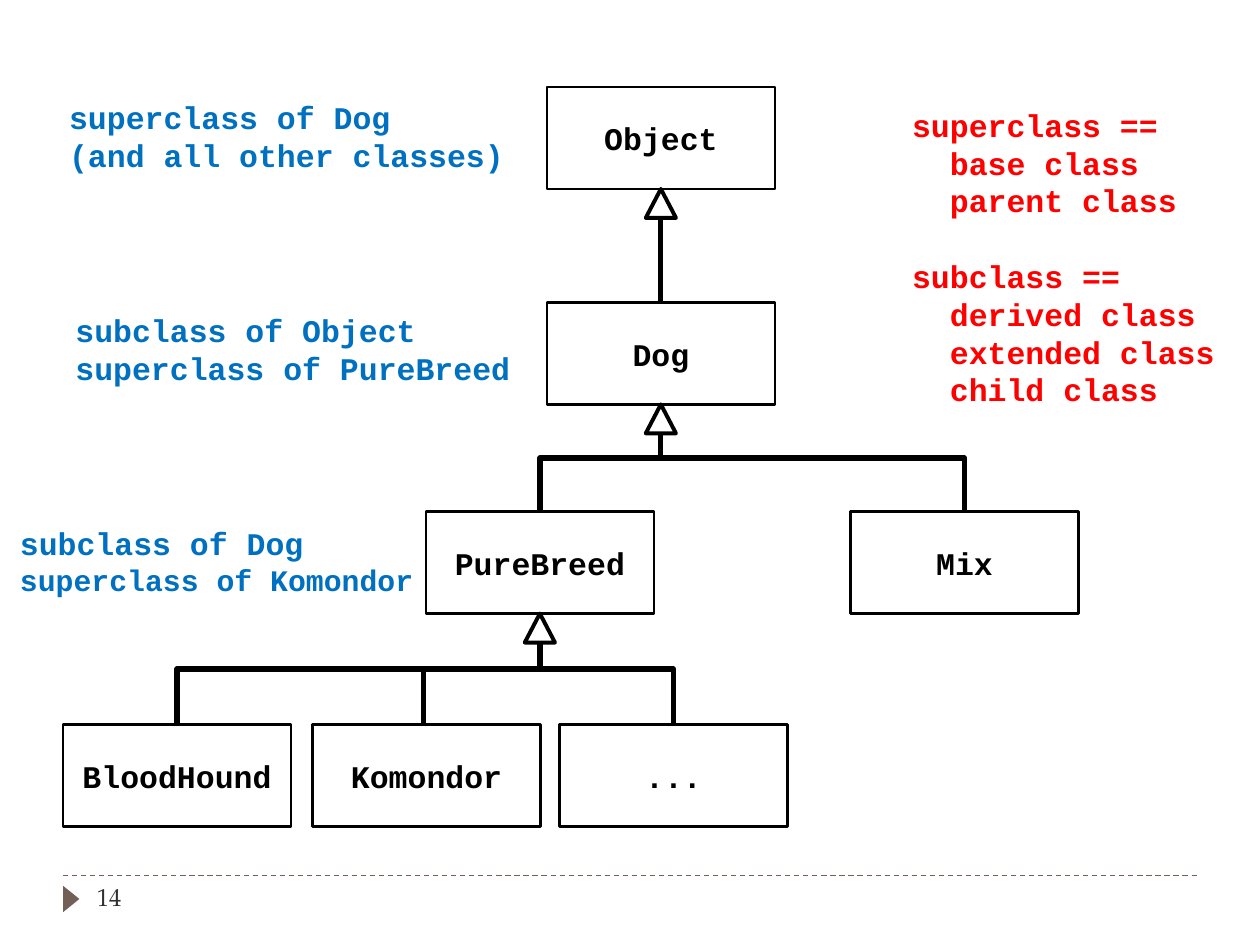
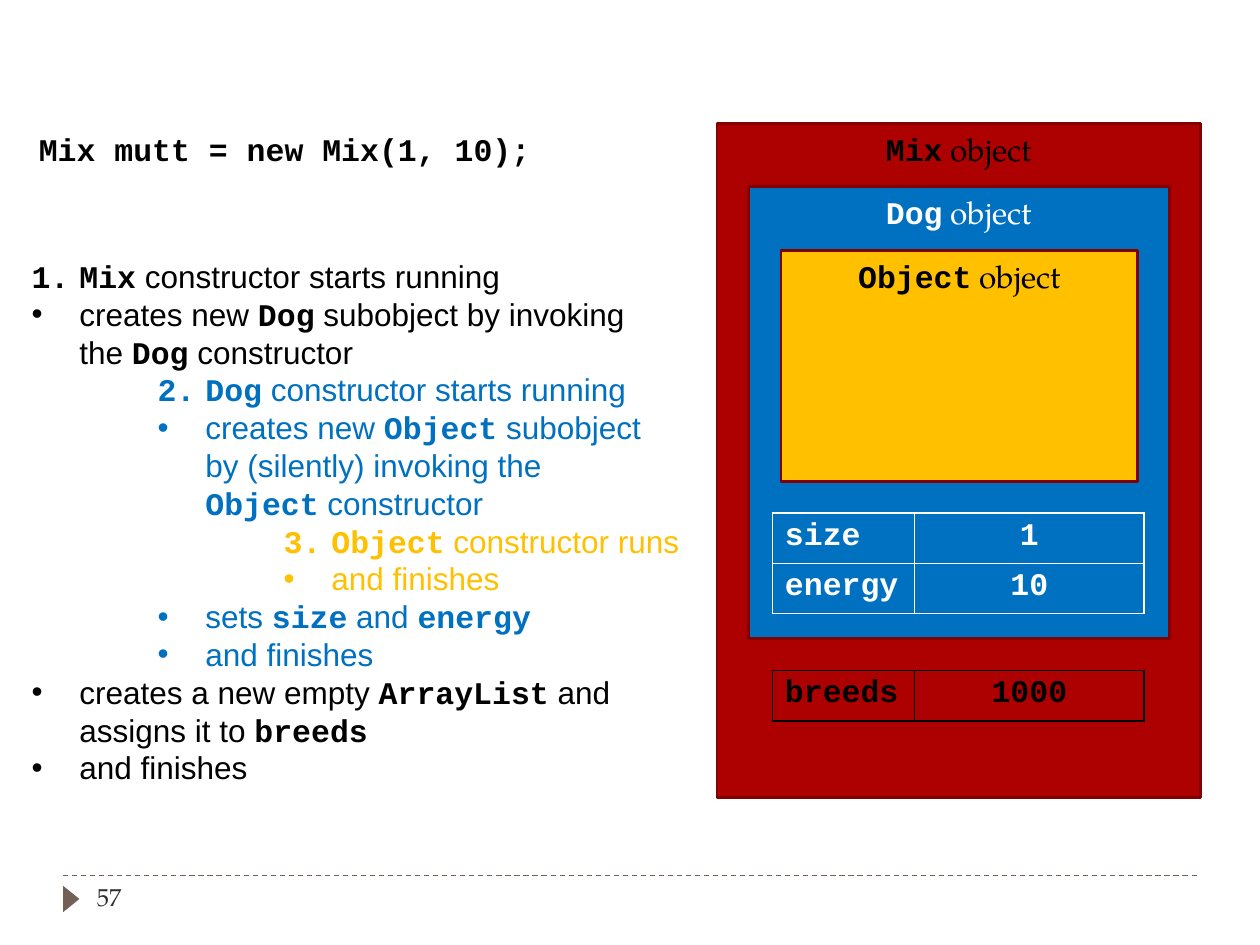
import copy
from dataclasses import dataclass

import pptx
import pptx.dml.color
import pptx.enum.dml
import pptx.enum.shapes
import pptx.enum.text
import pptx.oxml
import pptx.oxml.ns
import pptx.util
from lxml import etree

Inches = pptx.util.Inches
Pt = pptx.util.Pt
RGBColor = pptx.dml.color.RGBColor
Preset = pptx.enum.shapes.MSO_SHAPE
Connector = pptx.enum.shapes.MSO_CONNECTOR
Anchor = pptx.enum.text.MSO_ANCHOR
Align = pptx.enum.text.PP_ALIGN
qualified = pptx.oxml.ns.qn

BLACK = RGBColor(0x00, 0x00, 0x00)
WHITE = RGBColor(0xFF, 0xFF, 0xFF)
BLUE = RGBColor(0x00, 0x70, 0xC0)
RED = RGBColor(0xFF, 0x00, 0x00)
BRICK = RGBColor(0xAD, 0x01, 0x01)
DARK_RED = RGBColor(0x80, 0x01, 0x01)
AMBER = RGBColor(0xFF, 0xC0, 0x00)
TAUPE = RGBColor(0x72, 0x60, 0x56)
CHARCOAL = RGBColor(0x30, 0x30, 0x30)

CODE_FONT = "Courier New"
LIST_FONT = "Arial"
SERIF_FONT = "TeX Gyre Pagella"
TEXT_SIZE = 18
LEADING = 1.2

BOX_WIDTH, BOX_HEIGHT = 1.81, 0.81
ARROW_WIDTH, ARROW_HEIGHT = 0.24, 0.23
HANGING = 0.38


@dataclass(frozen=True)
class ClassBox:
    name: str
    left: float
    top: float

    @property
    def center(self) -> float:
        return self.left + BOX_WIDTH / 2

    @property
    def bottom(self) -> float:
        return self.top + BOX_HEIGHT


@dataclass(frozen=True)
class Note:
    """A text box of code; lines that start with a tab are indented."""
    left: float
    top: float
    width: float
    height: float
    lines: tuple[str, ...]
    color: RGBColor
    last_size: int = TEXT_SIZE


@dataclass(frozen=True)
class ObjectBox:
    label: str
    left: float
    top: float
    width: float
    height: float
    fill: RGBColor
    text_color: RGBColor


@dataclass(frozen=True)
class FieldTable:
    top: float
    rows: tuple[tuple[str, str], ...]
    color: RGBColor


@dataclass(frozen=True)
class Step:
    """A list line; code stands between backticks, number 0 means a bullet."""
    text: str
    depth: int = 0
    number: int = 0


OBJECT = ClassBox("Object", 4.34, 0.69)
DOG = ClassBox("Dog", 4.34, 2.4)
PURE_BREED = ClassBox("PureBreed", 3.38, 4.06)
MIX = ClassBox("Mix", 6.75, 4.06)
BLOOD_HOUND = ClassBox("BloodHound", 0.5, 5.75)
KOMONDOR = ClassBox("Komondor", 2.48, 5.75)
OTHERS = ClassBox("...", 4.44, 5.75)
HIERARCHY = {
    OBJECT: (DOG,),
    DOG: (MIX, PURE_BREED),
    PURE_BREED: (BLOOD_HOUND, OTHERS),
}

NOTES = (
    Note(0.5, 2.42, 3.67, 0.71, ("subclass of Object", "superclass of PureBreed"), BLUE),
    Note(0.06, 4.11, 3.36, 0.69, ("subclass of Dog", "superclass of Komondor"), BLUE, 17),
    Note(0.45, 0.73, 3.67, 0.71, ("superclass of Dog", "(and all other classes)"), BLUE),
    Note(7.14, 0.79, 2.61, 1.01, ("superclass ==", "\tbase class", "\tparent class"), RED),
    Note(7.14, 1.99, 2.61, 1.31,
         ("subclass ==", "\tderived class", "\textended class", "\tchild class"), RED),
)
STATEMENT = Note(0.21, 0.98, 4.12, 0.4, ("Mix mutt = new Mix(1, 10);",), BLACK)

OBJECT_BOXES = (
    ObjectBox("`Mix` object", 5.69, 0.98, 3.84, 5.35, BRICK, BLACK),
    ObjectBox("`Dog` object", 5.94, 1.48, 3.34, 3.59, BLUE, WHITE),
    ObjectBox("`Object` object", 6.2, 1.99, 2.83, 1.83, AMBER, BLACK),
)
FIELD_TABLES = (
    FieldTable(4.07, (("size", "1"), ("energy", "10")), WHITE),
    FieldTable(5.32, (("breeds", "1000"),), BLACK),
)
DEPTH_COLORS = (BLACK, BLUE, AMBER)
STEPS = (
    Step("`Mix` constructor starts running", number=1),
    Step("creates new `Dog` subobject by invoking\nthe `Dog` constructor"),
    Step("`Dog` constructor starts running", 1, 2),
    Step("creates new `Object` subobject\nby (silently) invoking the\n`Object` constructor", 1),
    Step("`Object` constructor runs", 2, 3),
    Step("and finishes", 2),
    Step("sets `size` and `energy`", 1),
    Step("and finishes", 1),
    Step("creates a new empty `ArrayList` and\nassigns it to `breeds`"),
    Step("and finishes"),
)


def style_run(run, color: RGBColor, font: str = CODE_FONT, size: int = TEXT_SIZE,
              bold: bool = True) -> None:
    run.font.name = font
    run.font.size = Pt(size)
    run.font.bold = bold
    run.font.color.rgb = color


def write_mixed(paragraph, text: str, font: str, color: RGBColor) -> None:
    """Write code between backticks in the code font, the rest in the given font."""
    paragraph.line_spacing = Pt(TEXT_SIZE * LEADING)
    for index, part in enumerate(text.split("`")):
        is_code = index % 2 == 1
        for line_index, line in enumerate(part.split("\n")):
            if line_index:
                paragraph.add_line_break()
            if line:
                run = paragraph.add_run()
                run.text = line
                style_run(run, color, CODE_FONT if is_code else font, bold=is_code)
    run_properties = paragraph.runs[0]._r.rPr
    for line_break in paragraph._p.findall(qualified("a:br")):
        line_break.append(copy.deepcopy(run_properties))


def add_line(slide, kind, begin: tuple[float, float], end: tuple[float, float],
             color: RGBColor, width: float):
    connector = slide.shapes.add_connector(kind, *map(Inches, begin + end))
    connector.line.color.rgb = color
    connector.line.width = Pt(width)
    etree.SubElement(connector._element.spPr, qualified("a:effectLst"))
    return connector


def add_preset(slide, preset, left: float, top: float, width: float, height: float,
               fill: RGBColor | None, line: RGBColor | None, line_width: float = 1.5):
    shape = slide.shapes.add_shape(preset, *map(Inches, (left, top, width, height)))
    shape.shadow.inherit = False
    if fill is None:
        shape.fill.background()
    else:
        shape.fill.solid()
        shape.fill.fore_color.rgb = fill
    if line is None:
        shape.line.fill.background()
    else:
        shape.line.color.rgb = line
        shape.line.width = Pt(line_width)
    return shape


def add_footer(slide, number: int) -> None:
    rule = add_line(slide, Connector.STRAIGHT, (0.5, 6.95), (9.5, 6.95), TAUPE, 0.75)
    rule.line.dash_style = pptx.enum.dml.MSO_LINE.DASH
    marker = add_preset(slide, Preset.ISOSCELES_TRIANGLE, 0.46, 7.07, 0.21, 0.13, TAUPE, None)
    marker.rotation = 90
    text_frame = slide.shapes.add_textbox(*map(Inches, (0.67, 6.95, 2.17, 0.4))).text_frame
    text_frame.word_wrap = True
    text_frame.text = str(number)
    style_run(text_frame.paragraphs[0].runs[0], CHARCOAL, SERIF_FONT, 14, False)


def add_note(slide, note: Note) -> None:
    area = map(Inches, (note.left, note.top, note.width, note.height))
    text_frame = slide.shapes.add_textbox(*area).text_frame
    text_frame.word_wrap = False
    text_frame.text = "\n".join(line.strip() for line in note.lines)
    for paragraph, line in zip(text_frame.paragraphs, note.lines):
        size = note.last_size if line == note.lines[-1] else TEXT_SIZE
        paragraph.line_spacing = Pt(size * LEADING)
        if line.startswith("\t"):
            paragraph._p.get_or_add_pPr().set("marL", str(Inches(0.3)))
        style_run(paragraph.runs[0], note.color, size=size)


def add_class_box(slide, box: ClassBox) -> None:
    shape = add_preset(slide, Preset.RECTANGLE, box.left, box.top, BOX_WIDTH, BOX_HEIGHT,
                       None, BLACK)
    text_frame = shape.text_frame
    text_frame.vertical_anchor = Anchor.MIDDLE
    text_frame.text = box.name
    paragraph = text_frame.paragraphs[0]
    paragraph.alignment = Align.CENTER
    paragraph.line_spacing = Pt(TEXT_SIZE * LEADING)
    style_run(paragraph.runs[0], BLACK)


def add_inheritance(slide, parent: ClassBox, child: ClassBox) -> None:
    """Join parent to child with a line that leaves the parent downwards."""
    across, down = child.center - parent.center, child.top - parent.bottom
    if not across:
        add_line(slide, Connector.STRAIGHT, (parent.center, parent.bottom),
                 (child.center, child.top), BLACK, 3)
        return
    # An elbow runs sideways first, so it is laid out flat and turned by 90 degrees.
    middle_x, middle_y = parent.center + across / 2, parent.bottom + down / 2
    elbow = add_line(slide, Connector.ELBOW, (middle_x - down / 2, middle_y + across / 2),
                     (middle_x + down / 2, middle_y - across / 2), BLACK, 3)
    elbow._element.spPr.find(qualified("a:xfrm")).set("rot", "5400000")


def add_object_box(slide, box: ObjectBox) -> None:
    shape = add_preset(slide, Preset.RECTANGLE, box.left, box.top, box.width, box.height,
                       box.fill, DARK_RED)
    shape.text_frame.vertical_anchor = Anchor.TOP
    paragraph = shape.text_frame.paragraphs[0]
    paragraph.alignment = Align.CENTER
    write_mixed(paragraph, box.label, SERIF_FONT, box.text_color)


def set_borders(cell, color: RGBColor) -> None:
    properties = cell._tc.get_or_add_tcPr()
    for index, side in enumerate(("lnL", "lnR", "lnT", "lnB")):
        border = pptx.oxml.parse_xml(
            f'<a:{side} {pptx.oxml.ns.nsdecls("a")} w="{Pt(1)}"><a:solidFill>'
            f'<a:srgbClr val="{color}"/></a:solidFill></a:{side}>')
        properties.insert(index, border)


def add_field_table(slide, fields: FieldTable) -> None:
    row_height = 0.38
    area = (6.13, fields.top, 2.95, row_height * len(fields.rows))
    table = slide.shapes.add_table(len(fields.rows), 2, *map(Inches, area)).table
    table.first_row = table.horz_banding = False
    table.columns[0].width, table.columns[1].width = Inches(1.13), Inches(1.82)
    for row_index, row in enumerate(fields.rows):
        for column_index, value in enumerate(row):
            cell = table.cell(row_index, column_index)
            cell.text = value
            cell.fill.background()
            set_borders(cell, fields.color)
            paragraph = cell.text_frame.paragraphs[0]
            paragraph.alignment = Align.CENTER if column_index else Align.LEFT
            style_run(paragraph.runs[0], fields.color)


def set_marker(paragraph, step: Step) -> None:
    properties = paragraph._p.get_or_add_pPr()
    properties.set("marL", str(Inches(HANGING + step.depth)))
    properties.set("indent", str(Inches(-HANGING)))
    if step.number:
        etree.SubElement(properties, qualified("a:buFont"), typeface="+mj-lt")
        etree.SubElement(properties, qualified("a:buAutoNum"), type="arabicPeriod",
                         startAt=str(step.number))
    else:
        etree.SubElement(properties, qualified("a:buFont"), typeface=LIST_FONT)
        etree.SubElement(properties, qualified("a:buChar"), char="•")


def fill_steps(body) -> None:
    body.left, body.top, body.width, body.height = map(Inches, (0.15, 1.99, 5.38, 4.34))
    text_frame = body.text_frame
    text_frame.word_wrap = True
    text_frame.auto_size = pptx.enum.text.MSO_AUTO_SIZE.NONE
    text_frame.vertical_anchor = Anchor.TOP
    for index, step in enumerate(STEPS):
        paragraph = text_frame.add_paragraph() if index else text_frame.paragraphs[0]
        paragraph.level = 2 * step.depth
        paragraph.space_before = Pt(0)
        write_mixed(paragraph, step.text, LIST_FONT, DEPTH_COLORS[step.depth])
        set_marker(paragraph, step)


def build_hierarchy_slide(presentation) -> None:
    slide = presentation.slides.add_slide(presentation.slide_layouts[6])
    add_footer(slide, 14)
    for box in (OTHERS, KOMONDOR, BLOOD_HOUND, PURE_BREED, MIX, DOG, OBJECT):
        add_class_box(slide, box)
    for parent, children in HIERARCHY.items():
        for child in children:
            add_inheritance(slide, parent, child)
    add_line(slide, Connector.STRAIGHT, (3.36, 5.31), (3.36, KOMONDOR.top), BLACK, 3)
    for note in NOTES:
        add_note(slide, note)
    for parent in HIERARCHY:
        add_preset(slide, Preset.ISOSCELES_TRIANGLE, parent.center - ARROW_WIDTH / 2,
                   parent.bottom, ARROW_WIDTH, ARROW_HEIGHT, WHITE, BLACK, 2.25)


def build_constructor_slide(presentation) -> None:
    slide = presentation.slides.add_slide(presentation.slide_layouts[1])
    title = slide.shapes.title._element
    title.getparent().remove(title)
    add_footer(slide, 57)
    for box in OBJECT_BOXES:
        add_object_box(slide, box)
    for fields in FIELD_TABLES:
        add_field_table(slide, fields)
    add_note(slide, STATEMENT)
    fill_steps(slide.placeholders[1])


def main() -> None:
    presentation = pptx.Presentation()
    presentation.slide_width, presentation.slide_height = Inches(10), Inches(7.5)
    build_hierarchy_slide(presentation)
    build_constructor_slide(presentation)
    presentation.save("out.pptx")


if __name__ == "__main__":
    main()
